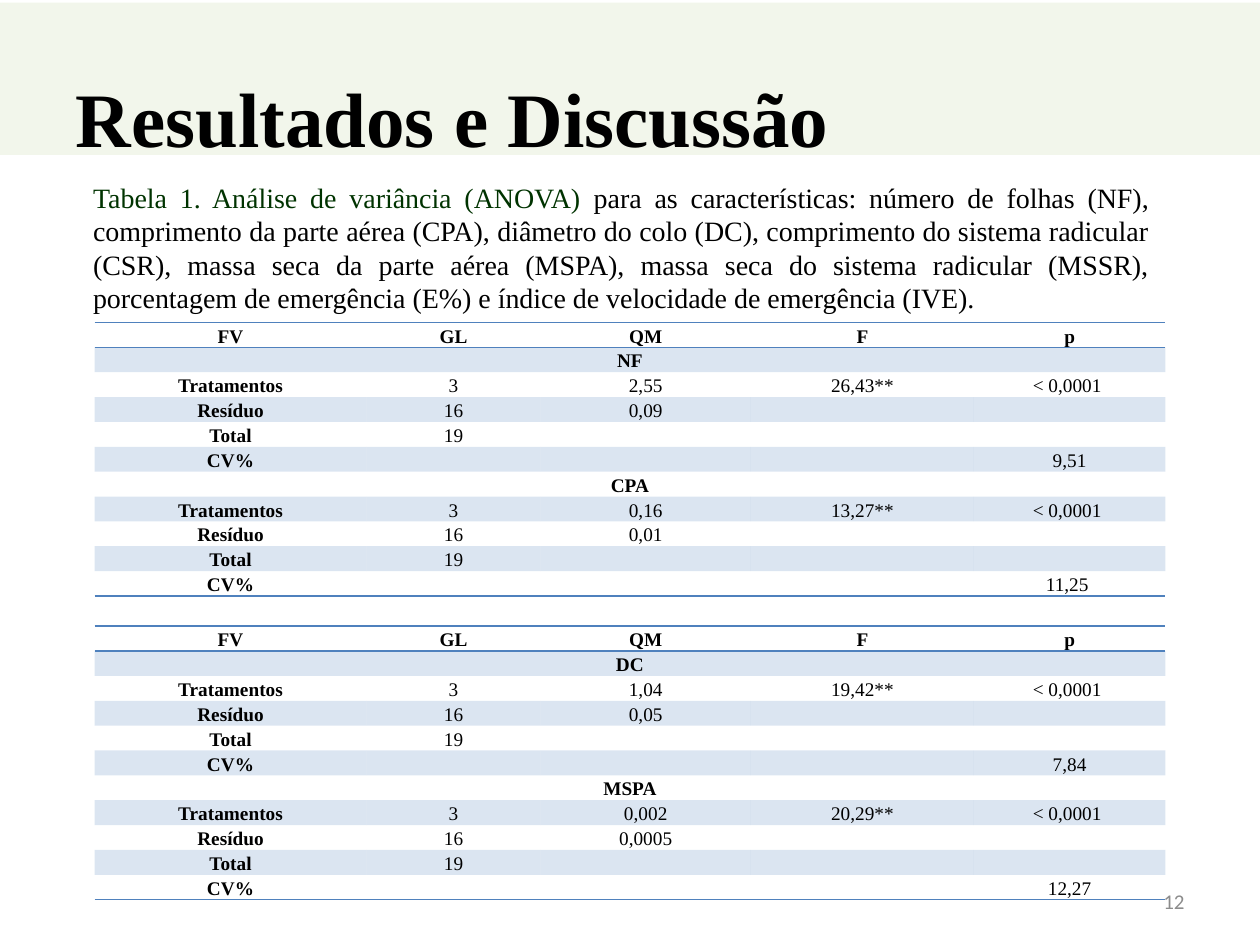
from dataclasses import dataclass

from lxml import etree
from pptx import Presentation
from pptx.dml.color import RGBColor
from pptx.enum.shapes import MSO_SHAPE
from pptx.enum.text import MSO_ANCHOR, MSO_AUTO_SIZE, PP_ALIGN
from pptx.oxml.ns import qn
from pptx.util import Inches, Pt

RECT = MSO_SHAPE.RECTANGLE
MIDDLE = MSO_ANCHOR.MIDDLE
GROW = MSO_AUTO_SIZE.SHAPE_TO_FIT_TEXT
LEFT, CENTER, RIGHT = PP_ALIGN.LEFT, PP_ALIGN.CENTER, PP_ALIGN.RIGHT
JUSTIFY = PP_ALIGN.JUSTIFY
TITLE_ONLY = 5
NO_TABLE_STYLE = "{2D5ABB26-0587-4C30-8999-92F81FD0307C}"


@dataclass(frozen=True)
class Theme:
    serif: str = "Times New Roman"
    sans: str = "Calibri"
    black: str = "000000"
    green: str = "003300"
    gray: str = "8C8C8C"
    band: str = "D7E4BD"
    blue: str = "4F81BD"
    title_pt: int = 44
    caption_pt: int = 16
    number_pt: int = 12
    table_pt: int = 11


THEME = Theme()

CAPTION_LEAD = "Tabela 1. Análise de variância (ANOVA) "
CAPTION_REST = (
    "para as características: número de folhas (NF), comprimento da parte aérea (CPA), "
    "diâmetro do colo (DC), comprimento do sistema radicular (CSR), massa seca da parte "
    "aérea (MSPA), massa seca do sistema radicular (MSSR), porcentagem de emergência (E%) "
    "e índice de velocidade de emergência (IVE)."
)
HEADER = ["FV", "GL", "QM", "F", "p"]
COL_WIDTHS = [2.16, 1.38, 1.67, 1.77, 1.52]
TABLE_HEIGHT = 2.17

# Each trait: name, treatment mean square, residual mean square, F, CV%
ANOVA_TABLES = [
    (2.56, [("NF", "2,55", "0,09", "26,43**", "9,51"),
            ("CPA", "0,16", "0,01", "13,27**", "11,25 ")]),
    (4.97, [("DC", "1,04", "0,05", "19,42**", "7,84"),
            ("MSPA", "0,002", "0,0005", "20,29**", "12,27")]),
]


def add_run(p, text, size, color, font=THEME.serif, bold=False):
    r = p.add_run()
    r.text = text
    r.font.name = font
    r.font.size = Pt(size)
    r.font.bold = bold
    r.font.color.rgb = RGBColor.from_string(color)


def fill_tinted(fill, color, percent):
    """Solid fill with the given opacity."""
    fill.solid()
    fill.fore_color.rgb = RGBColor.from_string(color)
    clr = fill._xPr.find(qn("a:solidFill"))[0]
    etree.SubElement(clr, qn("a:alpha"), val=str(percent * 1000))


def add_band(slide):
    sp = slide.shapes.add_shape(RECT, 0, Inches(0.02), Inches(10), Inches(1.21))
    sp.shadow.inherit = False
    sp.line.fill.background()
    fill_tinted(sp.fill, THEME.band, 30)


def add_title(slide, text):
    sp = slide.shapes.title
    sp.left, sp.top, sp.width, sp.height = map(Inches, (0.5, 0.3, 9, 1.25))
    slide.shapes._spTree.append(sp._element)  # in front of the band
    tf = sp.text_frame
    tf.vertical_anchor = MIDDLE
    p = tf.paragraphs[0]
    p.alignment = LEFT
    add_run(p, text, THEME.title_pt, THEME.black, bold=True)


def add_text(slide, box, align):
    sp = slide.shapes.add_textbox(*map(Inches, box))
    tf = sp.text_frame
    tf.word_wrap = True
    p = tf.paragraphs[0]
    p.alignment = align
    return tf, p


def add_rule(cell, side):
    """Horizontal rule on the top (lnT) or bottom (lnB) of a cell."""
    tc_pr = cell._tc.get_or_add_tcPr()
    ln = etree.Element(qn(f"a:{side}"), w=str(Pt(1)))
    solid = etree.SubElement(ln, qn("a:solidFill"))
    etree.SubElement(solid, qn("a:srgbClr"), val=THEME.blue)
    tc_pr.insert(len(tc_pr.findall(qn("a:lnT"))), ln)


def format_cell(cell, text, bold, shaded):
    cell.margin_left = cell.margin_right = Inches(0.07)
    cell.margin_top = cell.margin_bottom = 0
    cell.vertical_anchor = MIDDLE
    if shaded:
        fill_tinted(cell.fill, THEME.blue, 20)
    else:
        cell.fill.background()
    p = cell.text_frame.paragraphs[0]
    p.alignment = CENTER
    if text:
        p.line_spacing = 1.15
        add_run(p, text, THEME.table_pt, THEME.black, bold=bold)
    else:  # keeps empty cells from stretching the row
        etree.SubElement(p._p, qn("a:endParaRPr"), sz=str(THEME.table_pt * 100))


def anova_rows(traits):
    rows = [HEADER]
    for name, treatment, residual, f, cv in traits:
        rows += [
            [name, "", "", "", ""],
            ["Tratamentos", "3", treatment, f, "< 0,0001 "],
            ["Resíduo", "16", residual, "", ""],
            ["Total", "19", "", "", ""],
            ["CV%", "", "", "", cv],
        ]
    return rows


def add_anova_table(slide, top, traits):
    rows = anova_rows(traits)
    names = [trait[0] for trait in traits]
    last = len(rows) - 1
    frame = slide.shapes.add_table(len(rows), len(HEADER), Inches(0.75), Inches(top),
                                   Inches(sum(COL_WIDTHS)), Inches(TABLE_HEIGHT))
    table = frame.table
    table.first_row = table.horz_banding = False
    table._tbl.tblPr.find(qn("a:tableStyleId")).text = NO_TABLE_STYLE
    for col, width in zip(table.columns, COL_WIDTHS):
        col.width = Inches(width)
    for i, row in enumerate(rows):
        table.rows[i].height = Inches(TABLE_HEIGHT / len(rows))
        for j, text in enumerate(row):
            cell = table.cell(i, j)
            format_cell(cell, text, bold=i == 0 or j == 0, shaded=i % 2 == 1)
            if i == 0:
                add_rule(cell, "lnT")
            if i in (0, last):
                add_rule(cell, "lnB")
        if row[0] in names:
            table.cell(i, 0).merge(table.cell(i, len(HEADER) - 1))


def main():
    prs = Presentation()
    prs.slide_width, prs.slide_height = Inches(10), Inches(7.5)
    slide = prs.slides.add_slide(prs.slide_layouts[TITLE_ONLY])

    # Heading
    add_band(slide)
    add_title(slide, "Resultados e Discussão")

    # Variance tables
    for top, traits in ANOVA_TABLES:
        add_anova_table(slide, top, traits)

    # Caption
    tf, p = add_text(slide, (0.64, 1.38, 8.58, 1.18), JUSTIFY)
    tf.auto_size = GROW
    add_run(p, CAPTION_LEAD, THEME.caption_pt, THEME.green)
    add_run(p, CAPTION_REST, THEME.caption_pt, THEME.black)

    # Page number
    tf, p = add_text(slide, (7.17, 6.95, 2.33, 0.4), RIGHT)
    tf.vertical_anchor = MIDDLE
    add_run(p, "12", THEME.number_pt, THEME.gray, font=THEME.sans)

    prs.save("out.pptx")


if __name__ == "__main__":
    main()
